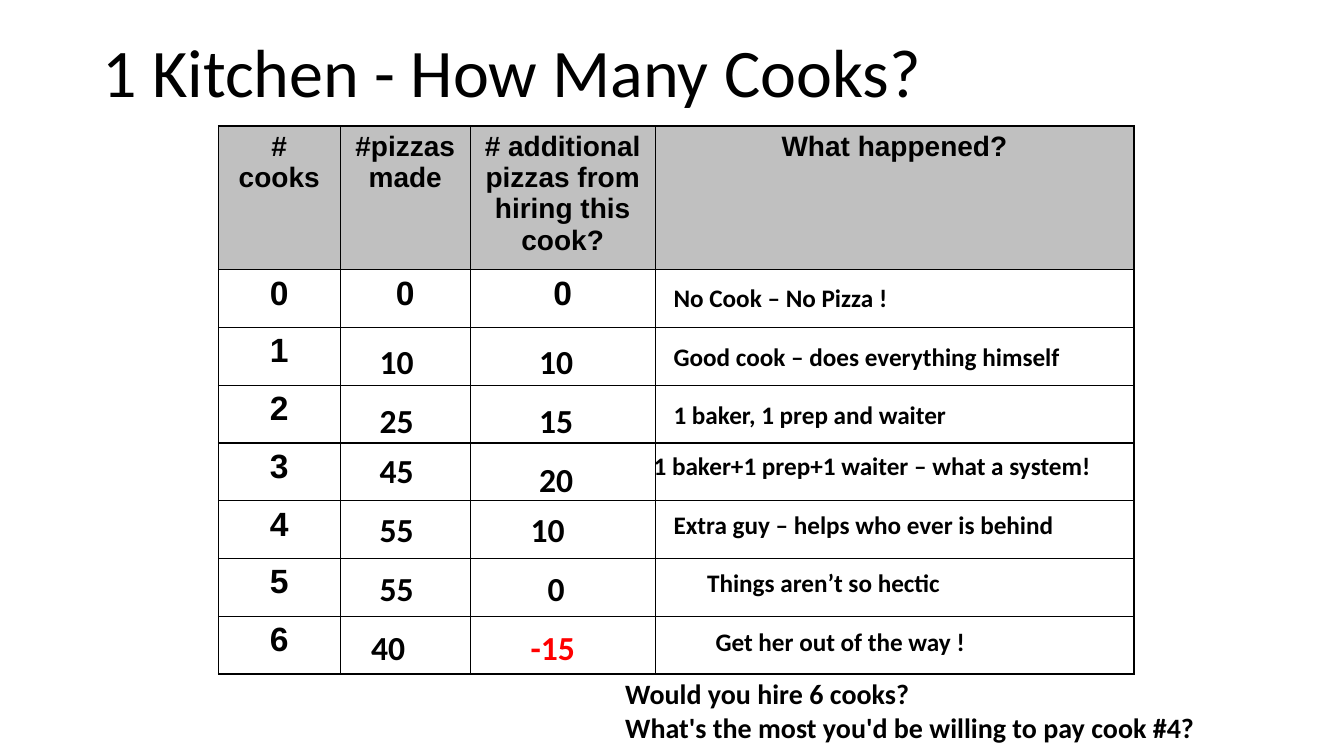
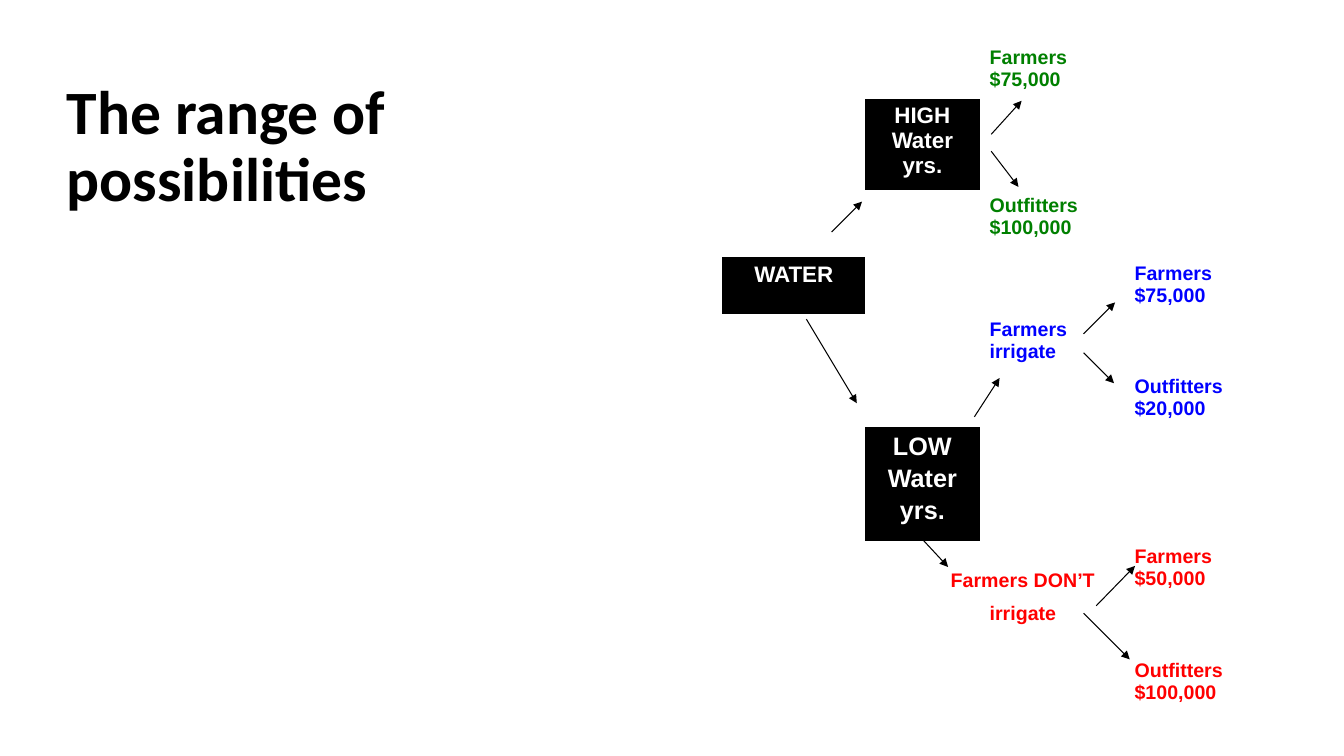
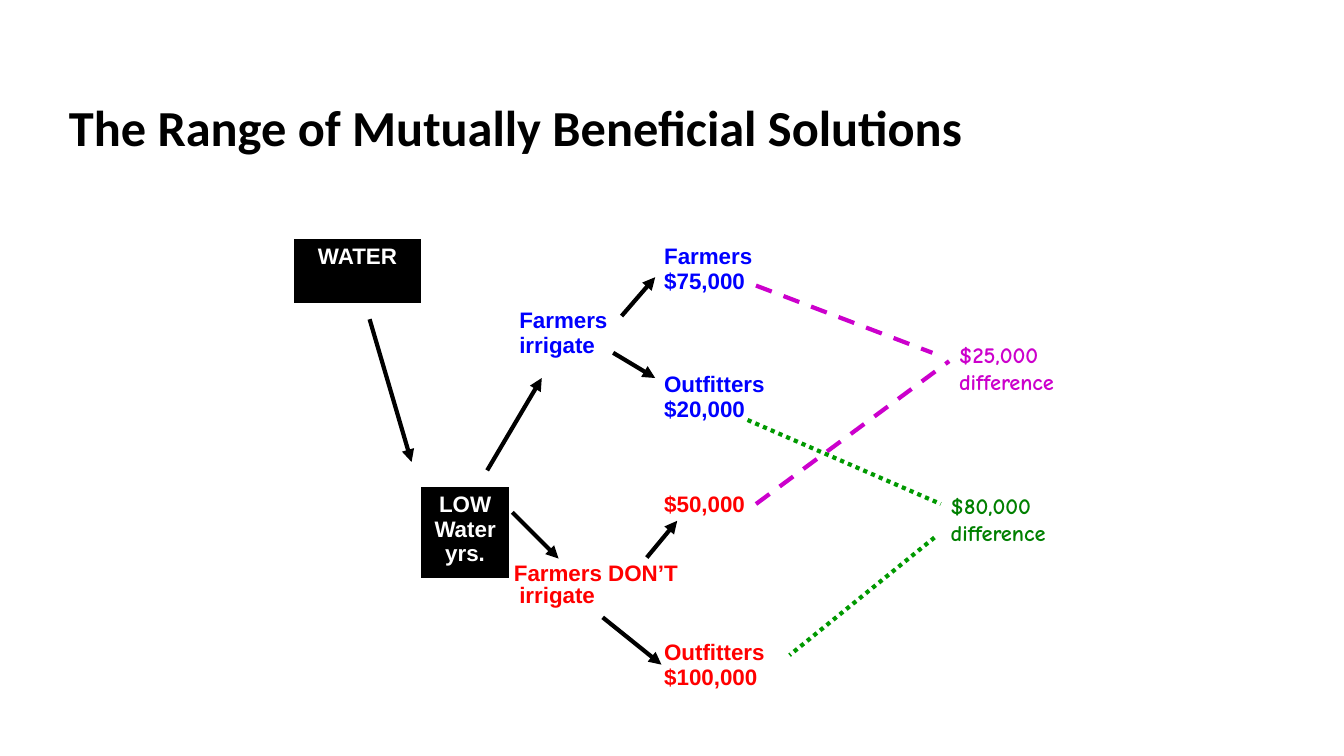
from lxml.etree import SubElement
from pptx import Presentation
from pptx.dml.color import RGBColor
from pptx.enum.dml import MSO_LINE
from pptx.enum.shapes import MSO_CONNECTOR
from pptx.enum.text import MSO_ANCHOR, MSO_AUTO_SIZE, PP_ALIGN
from pptx.oxml.ns import qn
from pptx.util import Pt

PX = 9525
BLACK = RGBColor(0x00, 0x00, 0x00)
WHITE = RGBColor(0xFF, 0xFF, 0xFF)
GRAY = RGBColor(0xC0, 0xC0, 0xC0)
RED = RGBColor(0xFF, 0x00, 0x00)
BLUE = RGBColor(0x00, 0x00, 0xFF)
GREEN = RGBColor(0x00, 0x80, 0x00)
LEAF = RGBColor(0x00, 0x99, 0x00)
PINK = RGBColor(0xCC, 0x00, 0xCC)
PLAIN = "{2D5ABB26-0587-4C30-8999-92F81FD0307C}"
LEFT, MID = PP_ALIGN.LEFT, PP_ALIGN.CENTER


def write(frame, text, size, color=BLACK, name="Arial", bold=True, align=LEFT, gap=0):
    """Fill a text frame, one paragraph per line of text."""
    frame.word_wrap = True
    look = {"size": Pt(size), "name": name, "bold": bold}
    for i, line in enumerate(text.split("\n")):
        para = frame.add_paragraph() if i else frame.paragraphs[0]
        para.alignment = align
        para.space_before = Pt(gap if i else 0)
        run = para.add_run()
        run.text = line
        run.font.color.rgb = color
        for key, val in look.items():
            setattr(run.font, key, val)


def grid(slide, x, y, cols, rows):
    """Add an unstyled table with the given column and row sizes."""
    frame = slide.shapes.add_table(len(rows), len(cols), x * PX, y * PX,
                                   sum(cols) * PX, sum(rows) * PX)
    table = frame.table
    table.first_row = table.horz_banding = False
    frame._element.find(".//" + qn("a:tableStyleId")).text = PLAIN
    for col, width in zip(table.columns, cols):
        col.width = width * PX
    for row, height in zip(table.rows, rows):
        row.height = height * PX
    for cell in table.iter_cells():
        cell.fill.background()
    return table


deck = Presentation()
deck.slide_width, deck.slide_height = 1280 * PX, 720 * PX

# Slides and titles: text, size, bold, left, top, width, height
TITLES = [
    ("1 Kitchen - How Many Cooks?", 48.6, False, 88, 36, 1104, 72),
    ("The range of possibilities", 44, True, 54, 60, 600, 162),
    ("The Range of Mutually Beneficial Solutions", 36, True, 56, 64, 1152, 120),
]
for text, size, bold, x, y, w, h in TITLES:
    title = deck.slides.add_slide(deck.slide_layouts[5]).shapes.title
    place = {"left": x, "top": y, "width": w, "height": h}
    for key, val in place.items():
        setattr(title, key, val * PX)
    frame = title.text_frame
    frame.auto_size = MSO_AUTO_SIZE.NONE
    frame.vertical_anchor = MSO_ANCHOR.MIDDLE
    write(frame, text, size, name="Calibri", bold=bold)
    frame.paragraphs[0].line_spacing = 0.9
cooks, *trees = deck.slides

# Cooks table
HEADS = ["# cooks", "#pizzas made", "# additional pizzas from hiring this cook?",
         "What happened?"]
table = grid(cooks, 208, 120, [116, 124, 176, 456], [137] + [55] * 7)
for cell in table.iter_cells():
    props = cell._tc.get_or_add_tcPr()
    for i, side in enumerate(("a:lnL", "a:lnR", "a:lnT", "a:lnB")):
        edge = props.makeelement(qn(side), {"w": str(Pt(1))})
        props.insert(i, edge)
        fill = SubElement(edge, qn("a:solidFill"))
        SubElement(fill, qn("a:srgbClr"), val=str(BLACK))
for col, head in enumerate(HEADS):
    cell = table.cell(0, col)
    cell.fill.solid()
    cell.fill.fore_color.rgb = GRAY
    write(cell.text_frame, head, 20, align=MID)
for num in range(7):
    for col in range(1 if num else 3):
        write(table.cell(num + 1, col).text_frame, str(num), 24, align=MID)

# Answers laid over the table: left, top, text
COUNTS = [
    (352, 320, "10"), (352, 376, "25"), (352, 424, "45"),
    (352, 480, "55"), (352, 536, "55"), (344, 592, "40"),
    (504, 320, "10"), (504, 376, "15"), (504, 432, "20"),
    (496, 480, "10"), (512, 536, "0"), (496, 592, "-15"),
]
EVENTS = [
    (632, 264, "No Cook – No Pizza !"),
    (632, 320, "Good cook – does everything himself"),
    (632, 376, "1 baker, 1 prep and waiter"),
    (613, 424, "1 baker+1 prep+1 waiter – what a system!"),
    (632, 480, "Extra guy – helps who ever is behind"),
    (664, 536, "Things aren’t so hectic"),
    (672, 592, "Get her out of the way !"),
]
ASK = [(586, 640, "Would you hire 6 cooks?\n"
        "What's the most you'd be willing to pay cook #4?")]
for notes, size, w, h in ((COUNTS, 24, 80, 48), (EVENTS, 18, 500, 38), (ASK, 20, 580, 74)):
    for x, y, text in notes:
        box = cooks.shapes.add_textbox(x * PX, y * PX, w * PX, h * PX)
        color = RED if text.startswith("-") else BLACK
        write(box.text_frame, text, size, color, "Calibri")

# Decision trees: cells are row, column, text, size, colour (white means black box)
HIGH_LOW = {
    "at": (688, 40),
    "cols": [136, 109, 138, 156],
    "rows": [54, 87, 64, 54, 54, 54, 108, 54, 55, 54],
    "cells": [
        (0, 2, "Farmers\n$75,000", 14, GREEN),
        (1, 1, "HIGH Water yrs.", 16, WHITE),
        (2, 2, "Outfitters\n$100,000", 14, GREEN),
        (3, 0, "WATER", 16, WHITE),
        (3, 3, "Farmers $75,000", 14, BLUE),
        (4, 2, "Farmers irrigate", 14, BLUE),
        (5, 3, "Outfitters $20,000", 14, BLUE),
        (6, 1, "LOW\nWater\nyrs.", 18, WHITE),
        (7, 3, "Farmers\n$50,000", 14, RED),
        (8, 2, "irrigate", 14, RED),
        (9, 3, "Outfitters $100,000", 14, RED),
    ],
    "gap": 3,
    "weight": 0.75,
    "arrows": [
        (1032, 318, 1062, 288), (1032, 336, 1061, 365), (928, 397, 952, 360),
        (1032, 584, 1076, 628), (768, 304, 816, 384), (792, 221, 821, 192),
        (944, 128, 973, 96), (944, 144, 970, 178), (1044, 577, 1081, 539),
        (877, 512, 903, 540),
    ],
    "links": [],
    "labels": [(896, 536, 172, 32, "Farmers DON’T", 14, RED, "Arial")],
}
LOW_ONLY = {
    "at": (280, 64),
    "cols": [121, 84, 138, 156],
    "rows": [55, 55, 54, 61, 61, 60, 54, 87, 54, 60],
    "cells": [
        (3, 0, "WATER", 16, WHITE),
        (3, 3, "Farmers $75,000", 16, BLUE),
        (4, 2, "Farmers irrigate", 16, BLUE),
        (5, 3, "Outfitters $20,000", 16, BLUE),
        (7, 1, "LOW\nWater yrs.", 16, WHITE),
        (7, 3, "$50,000", 16, RED),
        (8, 2, "irrigate", 16, RED),
        (9, 3, "Outfitters $100,000", 16, RED),
    ],
    "gap": 0,
    "weight": 3,
    "arrows": [
        (464, 448, 516, 360), (488, 488, 532, 532), (352, 304, 392, 440),
        (592, 301, 624, 264), (584, 336, 624, 360), (616, 531, 645, 496),
        (574, 588, 630, 633),
    ],
    "links": [
        (720, 480, 904, 344, PINK, MSO_LINE.DASH),
        (720, 272, 888, 336, PINK, MSO_LINE.DASH),
        (712, 400, 896, 480, LEAF, MSO_LINE.ROUND_DOT),
        (890, 512, 752, 624, LEAF, MSO_LINE.ROUND_DOT),
    ],
    "labels": [
        (904, 320, 168, 61, "$25,000\ndifference", 16, PINK, "Comic Neue"),
        (896, 464, 160, 61, "$80,000\ndifference", 16, GREEN, "Comic Neue"),
        (480, 528, 190, 61, "Farmers DON’T", 16, RED, "Arial"),
    ],
}
for slide, tree in zip(trees, (HIGH_LOW, LOW_ONLY)):
    # Nodes
    table = grid(slide, *tree["at"], tree["cols"], tree["rows"])
    for row, col, text, size, color in tree["cells"]:
        cell = table.cell(row, col)
        dark = color == WHITE
        if dark:
            cell.fill.solid()
            cell.fill.fore_color.rgb = BLACK
        write(cell.text_frame, text, size, color, align=MID if dark else LEFT,
              gap=tree["gap"] if dark else 0)

    # Arrows, then dashed links
    arrows = [(*ends, BLACK, None) for ends in tree["arrows"]]
    for x1, y1, x2, y2, color, dash in arrows + tree["links"]:
        link = slide.shapes.add_connector(MSO_CONNECTOR.STRAIGHT, x1 * PX, y1 * PX,
                                          x2 * PX, y2 * PX)
        link.line.color.rgb = color
        link.line.width = Pt(tree["weight"])
        props = link._element.spPr
        if dash:
            link.line.dash_style = dash
        else:
            SubElement(props.find(qn("a:ln")), qn("a:tailEnd"), type="triangle")
        SubElement(props, qn("a:effectLst"))

    # Labels
    for x, y, w, h, text, size, color, name in tree["labels"]:
        box = slide.shapes.add_textbox(x * PX, y * PX, w * PX, h * PX)
        write(box.text_frame, text, size, color, name)

deck.save("out.pptx")
